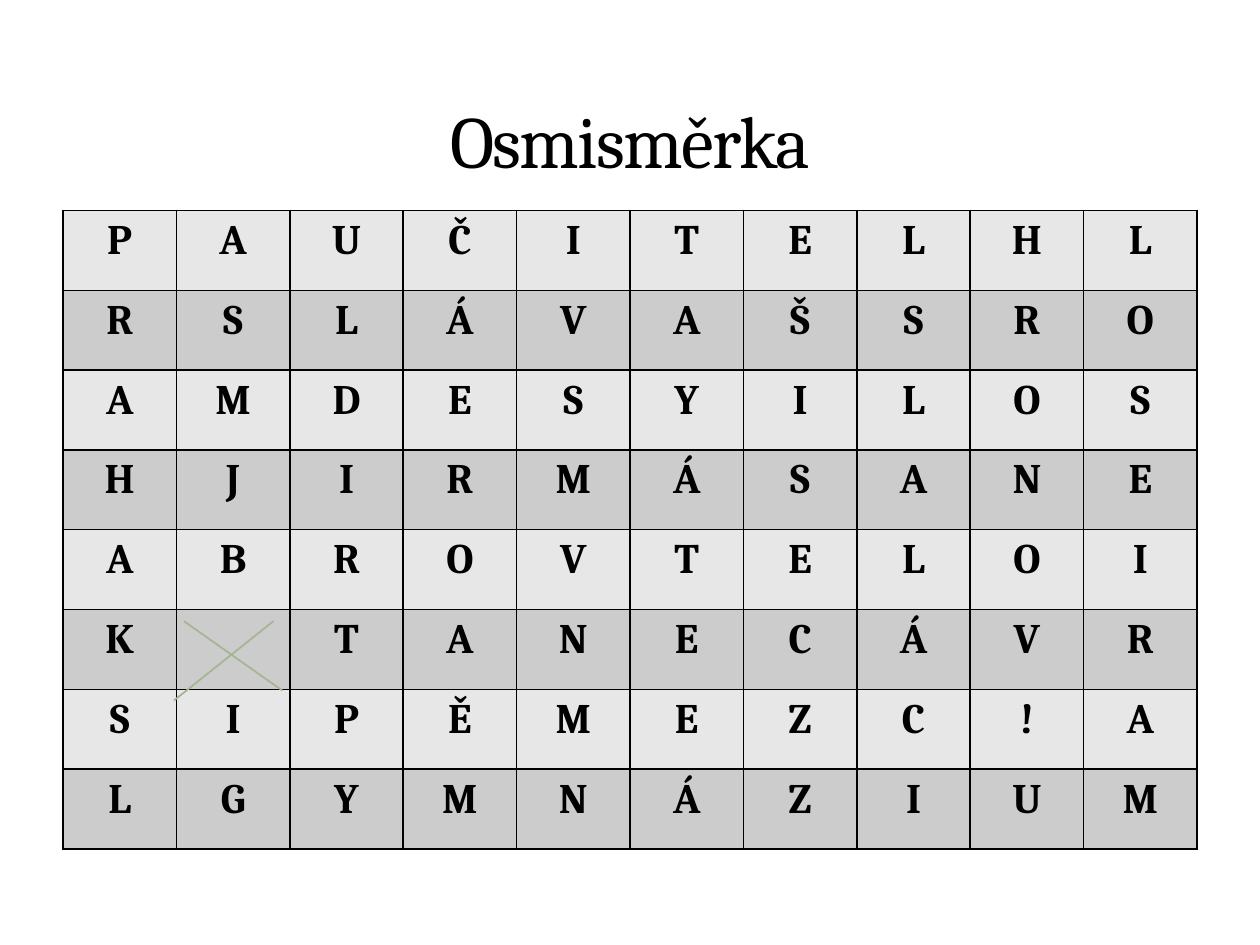
"""Build a word-search slide with a letter grid and one crossed-out cell."""
import pptx
import pptx.dml.color
import pptx.enum.shapes
import pptx.enum.text
import pptx.oxml
import pptx.oxml.ns
import pptx.util

Inches = pptx.util.Inches
RGBColor = pptx.dml.color.RGBColor

TITLE = "Osmisměrka"
LETTERS = [
    "PAUČITELHL",
    "RSLÁVAŠSRO",
    "AMDESYILOS",
    "HJIRMÁSANE",
    "ABROVTELOI",
    "K TANECÁVR",
    "SIPĚMEZC!A",
    "LGYMNÁZIUM",
]
CROSS = [(1.46, 4.93, 2.24, 5.48), (1.38, 5.56, 2.17, 4.93)]

FONT = "Cambria"
BLACK = RGBColor(0x00, 0x00, 0x00)
BANDS = [RGBColor(0xE7, 0xE7, 0xE7), RGBColor(0xCC, 0xCC, 0xCC)]
GREEN = RGBColor(0xA5, 0xB5, 0x92)
LEFT, TOP, WIDTH, HEIGHT = 0.5, 1.67, 9, 5.07


def write(tf, text, size, bold=False, spacing=0):
    p = tf.paragraphs[0]
    p.alignment = pptx.enum.text.PP_ALIGN.CENTER
    r = p.add_run()
    r.text = text
    r.font.name = FONT
    r.font.size = pptx.util.Pt(size)
    r.font.bold = bold
    r.font.color.rgb = BLACK
    if spacing:
        r.font._element.set("spc", str(spacing * 100))


def add_borders(cell):
    tcPr = cell._tc.get_or_add_tcPr()
    for i, side in enumerate(("lnL", "lnR", "lnT", "lnB")):
        tcPr.insert(i, pptx.oxml.parse_xml(
            f'<a:{side} {pptx.oxml.ns.nsdecls("a")} w="12700"><a:solidFill>'
            f'<a:srgbClr val="{BLACK}"/></a:solidFill></a:{side}>'))


def add_grid(s):
    rows, cols = len(LETTERS), len(LETTERS[0])
    table = s.shapes.add_table(rows, cols, Inches(LEFT), Inches(TOP),
                               Inches(WIDTH), Inches(HEIGHT)).table
    for column in table.columns:
        column.width = Inches(WIDTH / cols)
    for i, word in enumerate(LETTERS):
        table.rows[i].height = Inches(HEIGHT / rows)
        for j, letter in enumerate(word):
            cell = table.cell(i, j)
            cell.fill.solid()
            cell.fill.fore_color.rgb = BANDS[i % 2]
            add_borders(cell)
            if letter.strip():
                write(cell.text_frame, letter, size=24, bold=True)


def add_line(s, ends):
    line = s.shapes.add_connector(pptx.enum.shapes.MSO_CONNECTOR.STRAIGHT,
                                  *map(Inches, ends))
    line.line.color.rgb = GREEN
    line.line.width = pptx.util.Pt(1)
    line._element.spPr.append(pptx.oxml.parse_xml(
        f'<a:effectLst {pptx.oxml.ns.nsdecls("a")}/>'))


def main():
    prs = pptx.Presentation()
    prs.slide_width, prs.slide_height = Inches(10), Inches(7.5)
    s = prs.slides.add_slide(prs.slide_layouts[6])
    add_grid(s)
    tf = s.shapes.add_textbox(Inches(LEFT), Inches(0.17),
                              Inches(WIDTH), Inches(1.33)).text_frame
    tf.word_wrap = True
    tf.vertical_anchor = pptx.enum.text.MSO_ANCHOR.BOTTOM
    write(tf, TITLE, size=42, spacing=-1)
    for ends in CROSS:
        add_line(s, ends)
    prs.save("out.pptx")


if __name__ == "__main__":
    main()
